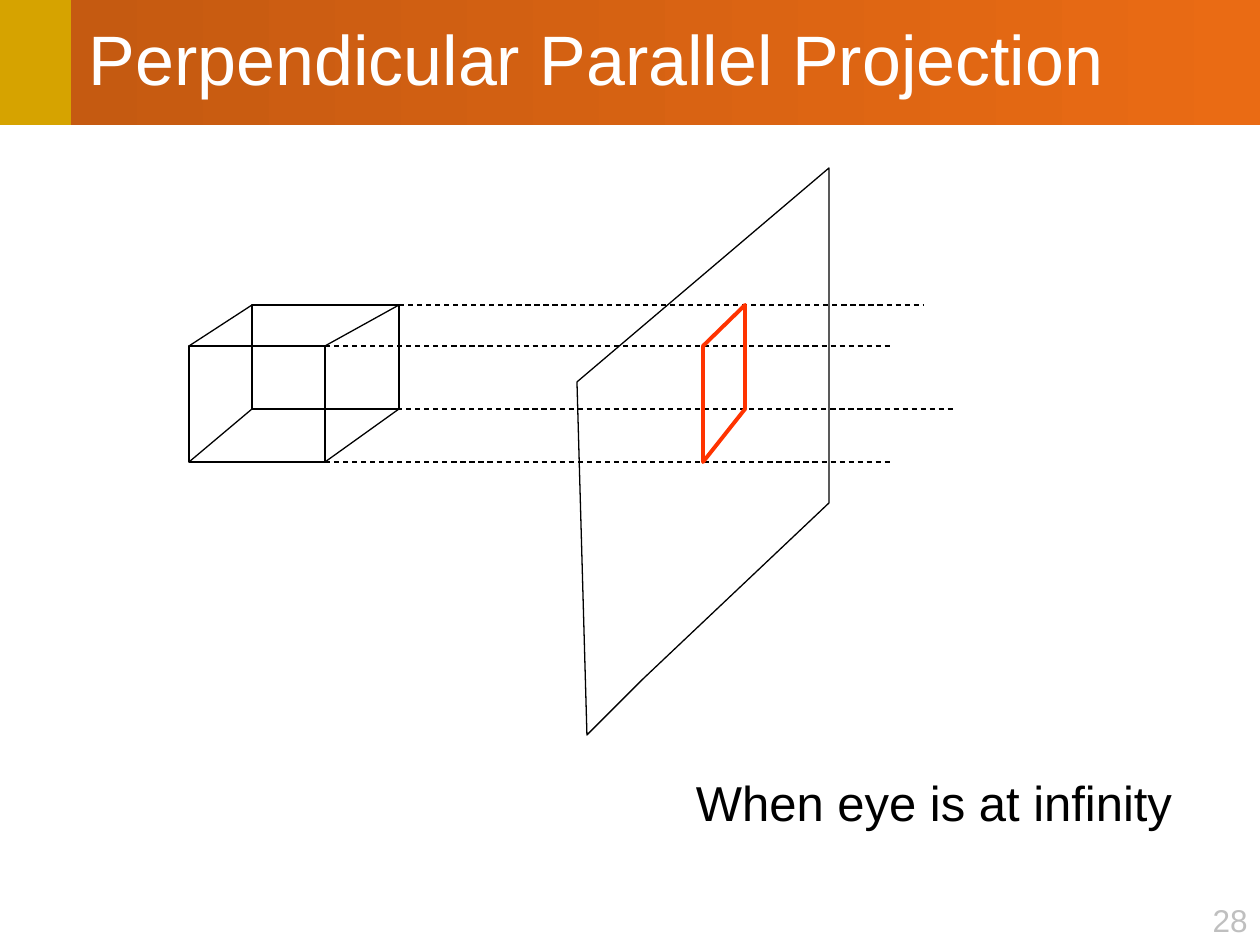
from dataclasses import dataclass

from lxml import etree
from pptx import Presentation, util as u
from pptx.dml.color import RGBColor
from pptx.enum import dml, shapes, text
from pptx.oxml.ns import qn

PX = 914400 / 126


@dataclass(frozen=True)
class Theme:
    font: str = "Arial"
    title: int = 40
    body: int = 28
    small: int = 18
    thin: float = 0.75
    thick: float = 2.25
    gold: str = "D6A300"
    dark: str = "C55A11"
    light: str = "EA6B14"
    ink: str = "000000"
    white: str = "FFFFFF"
    grey: str = "BFBFBF"
    red: str = "FF3300"


T = Theme()


def px(n):
    return u.Emu(round(n * PX))


def rgb(code):
    return RGBColor.from_string(code)


def write(frame, words, size, color=T.ink, align=text.PP_ALIGN.LEFT, wrap=False,
          anchor=text.MSO_ANCHOR.TOP):
    frame.word_wrap = wrap
    frame.auto_size = text.MSO_AUTO_SIZE.NONE if wrap else text.MSO_AUTO_SIZE.SHAPE_TO_FIT_TEXT
    frame.vertical_anchor = anchor
    para = frame.paragraphs[0]
    para.alignment = align
    run = para.add_run()
    run.text = words
    run.font.name, run.font.size = T.font, u.Pt(size)
    run.font.color.rgb = rgb(color)
    return para


def label(slide, box, words, size, **style):
    shape = slide.shapes.add_textbox(*map(px, box))
    write(shape.text_frame, words, size, **style)


def outline(shape, color=T.ink, width=T.thin):
    shape.shadow.inherit = False
    shape.fill.background()
    shape.line.color.rgb = rgb(color)
    shape.line.width = u.Pt(width)


def rect(slide, box):
    shape = slide.shapes.add_shape(shapes.MSO_SHAPE.RECTANGLE, *map(px, box))
    outline(shape)
    return shape


def line(slide, start, end, dash=False):
    edge = slide.shapes.add_connector(
        shapes.MSO_CONNECTOR.STRAIGHT, *map(px, (*start, *end)))
    edge.line.color.rgb = rgb(T.ink)
    edge.line.width = u.Pt(T.thin)
    if dash:
        edge.line.dash_style = dml.MSO_LINE.DASH
    etree.SubElement(edge._element.spPr, qn("a:effectLst"))


def outlined(slide, origin, points, **style):
    """Draw a closed outline whose points are relative to origin."""
    x, y = origin
    first, *rest = [(x + dx, y + dy) for dx, dy in points]
    path = slide.shapes.build_freeform(*first, scale=PX)
    path.add_line_segments(rest, close=True)
    outline(path.convert_to_shape(), **style)


def header(slide, box, words):
    x, y, w, h = box
    side = 71
    tab = rect(slide, (x, y, side, h))
    tab.fill.solid()
    tab.fill.fore_color.rgb = rgb(T.gold)
    tab.line.fill.background()

    title = slide.shapes.title
    title.left, title.top, title.width, title.height = map(px, (x + side, y, w - side, h))
    title.fill.gradient()
    title.fill.gradient_angle = 0
    for stop, place, color in zip(title.fill.gradient_stops, (0, 1), (T.dark, T.light)):
        stop.position = place
        stop.color.rgb = rgb(color)
    para = write(title.text_frame, words, T.title, color=T.white, wrap=True,
                 anchor=text.MSO_ANCHOR.MIDDLE)
    para.line_spacing = 0.9
    para._p.get_or_add_pPr().set("marL", str(px(5)))


def cube(slide, box):
    """Draw a wire cube: front face at lower left, back face at upper right."""
    x, y, w, h = box
    front = (x, y + 41, 136, h - 41)
    back = (x + 63, y, w - 63, 104)
    for face in (front, back):
        rect(slide, face)
    for near, far in zip(corners(front), corners(back)):
        line(slide, near, far)


def corners(box):
    x, y, w, h = box
    return [(x, y), (x + w, y), (x, y + h), (x + w, y + h)]


def rays(slide, box):
    """Draw the dashed level rays; each row is start, end and drop."""
    x, y, w, h = box
    for start, end, drop in ((74, 599, 0), (0, 567, 41), (63, w, 104), (0, 567, h)):
        line(slide, (x + start, y + drop), (x + end, y + drop), dash=True)


def plane(slide, box):
    x, y, w, h = box
    outlined(slide, (x, y),
             [(0, 214), (w, 0), (w, 335), (66, 511), (10, h)])


def image(slide, box):
    x, y, w, h = box
    outlined(slide, (x, y), [(0, 41), (w, 0), (w, 104), (0, h)],
             color=T.red, width=T.thick)


def main():
    deck = Presentation()
    deck.slide_width, deck.slide_height = px(1260), px(945)
    slide = deck.slides.add_slide(deck.slide_layouts[5])
    header(slide, (0, 0, 1260, 125), "Perpendicular Parallel Projection")
    cube(slide, (189, 305, 210, 157))
    rays(slide, (325, 305, 630, 157))
    plane(slide, (577, 168, 252, 567))
    image(slide, (703, 305, 42, 157))
    label(slide, (683, 766, 502, 72), "When eye is at infinity", T.body,
          align=text.PP_ALIGN.CENTER)
    label(slide, (1196, 895, 64, 50), "28", T.small, color=T.grey,
          align=text.PP_ALIGN.RIGHT)
    deck.save("out.pptx")


if __name__ == "__main__":
    main()
